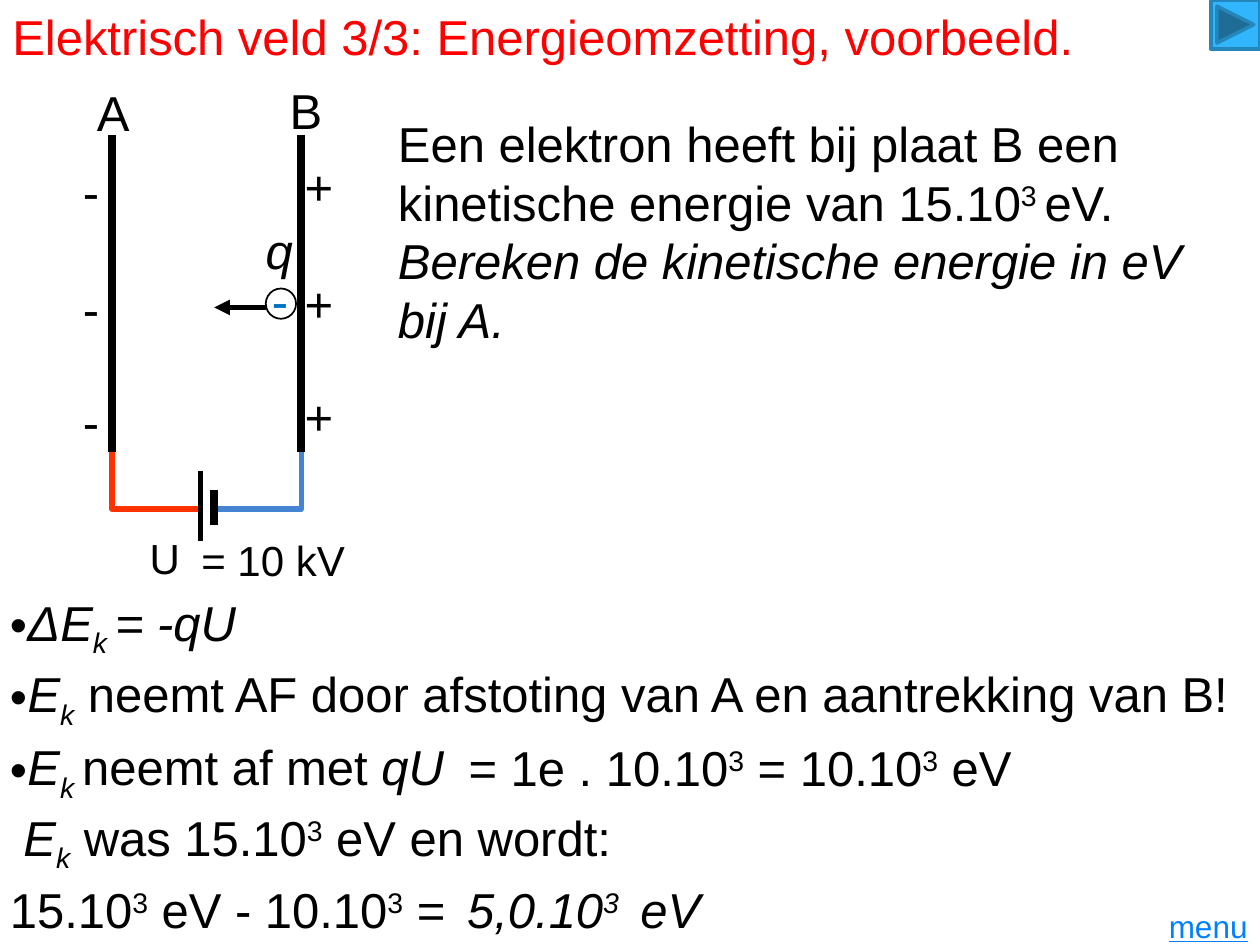
"""Build a physics slide: energy conversion of an electron between charged plates."""
from lxml.etree import SubElement
from pptx import Presentation
from pptx.dml.color import RGBColor
from pptx.enum.shapes import MSO_CONNECTOR, MSO_SHAPE
from pptx.enum.text import MSO_ANCHOR, PP_ALIGN
from pptx.oxml.ns import qn
from pptx.util import Inches, Pt

BLACK = RGBColor(0x00, 0x00, 0x00)
RED = RGBColor(0xFF, 0x00, 0x00)
ORANGE = RGBColor(0xFF, 0x33, 0x00)
WIRE_BLUE = RGBColor(0x45, 0x84, 0xD3)
CHARGE_BLUE = RGBColor(0x00, 0x70, 0xC0)
LINK_BLUE = RGBColor(0x00, 0x80, 0xFF)
BUTTON_FILL = RGBColor(0x31, 0xB6, 0xFD)
BUTTON_LINE = RGBColor(0x24, 0x87, 0xBB)

ITALIC = {"italic": True}
SUPER = {"baseline": 30000}
ITALIC_SUPER = {**ITALIC, **SUPER}
ITALIC_SUB = {"italic": True, "baseline": -25000}
MIDDLE = {"anchor": MSO_ANCHOR.MIDDLE}
BULLET = {"bullet": True}

TITLE = "Elektrisch veld 3/3: Energieomzetting, voorbeeld."
QUESTION = [
    ("Een elektron heeft bij plaat B een kinetische energie van 15.10", {}),
    ("3 ", SUPER), ("eV. ", {}),
    ("Bereken de kinetische energie in eV bij A.", ITALIC),
]
SOLUTION = [
    (4.65, 3.47, BULLET, [("ΔE", ITALIC), ("k ", ITALIC_SUB), ("= -qU", ITALIC)]),
    (5.22, 10.01, BULLET, [
        ("E", ITALIC), ("k", ITALIC_SUB),
        (" neemt AF door afstoting van A en aantrekking van B!", {})]),
    (5.8, 4.16, BULLET, [
        ("E", ITALIC), ("k ", ITALIC_SUB), ("neemt af met ", {}), ("qU", ITALIC)]),
    (6.36, 10, {}, [
        (" ", {}), ("E", ITALIC), ("k", ITALIC_SUB), (" was 15.10", {}),
        ("3", SUPER), (" eV en wordt:", {})]),
    (6.93, 4.28, {}, [
        ("15.10", {}), ("3", SUPER), (" eV - 10.10", {}), ("3", SUPER), (" =", {})]),
]
ENERGY_LOSS = [("= 1e . 10.10", {}), ("3", SUPER), (" = 10.10", {}), ("3", SUPER), (" eV", {})]
RESULT = [("5,0.10", ITALIC), ("3 ", ITALIC_SUPER), (" eV", ITALIC)]

PLATE_A, PLATE_B = 0.89, 2.39
PLATE_TOP, PLATE_BOTTOM, WIRE_BOTTOM = 1.07, 3.59, 4.04
CHARGE_TOPS = (1.19, 2.12, 3.02)
CELL_LONG, CELL_SHORT = 1.59, 1.7
LABELS = [
    ("A", (0.67, 0.53, 0.87, 0.71), MIDDLE),
    ("B", (2.2, 0.52, 0.87, 0.71), MIDDLE),
    ("U", (1.09, 4.07, 1.23, 0.71), {**MIDDLE, "size": 24}),
    ("= 10 kV", (1.5, 4.09, 1.73, 0.71), {**MIDDLE, "size": 24}),
    ("-", (2.06, 2.1, 0.63, 0.57), {"color": CHARGE_BLUE}),
]
LINES = [
    ((PLATE_A, PLATE_TOP), (PLATE_A, PLATE_BOTTOM), 5),
    ((PLATE_B, PLATE_TOP), (PLATE_B, PLATE_BOTTOM), 5),
    ((CELL_LONG, 3.74), (CELL_LONG, 4.29), 3),
    ((CELL_SHORT, 3.89), (CELL_SHORT, 4.17), 4.5),
]
WIRES = [(PLATE_A, CELL_LONG, ORANGE), (PLATE_B, CELL_SHORT, WIRE_BLUE)]


def add_text(slide, box, runs, size=28, color=BLACK, anchor=MSO_ANCHOR.TOP,
             align=PP_ALIGN.LEFT, bullet=False, underline=None):
    frame = slide.shapes.add_textbox(*map(Inches, box)).text_frame
    frame.word_wrap = True
    frame.vertical_anchor = anchor
    paragraph = frame.paragraphs[0]
    paragraph.alignment = align
    if bullet:
        properties = paragraph._p.get_or_add_pPr()
        properties.set("marL", str(Inches(0.14)))
        properties.set("indent", str(-Inches(0.14)))
        SubElement(properties, qn("a:buFont"), typeface="Arial")
        SubElement(properties, qn("a:buChar"), char="•")
    for text, style in runs:
        run = paragraph.add_run()
        run.text = text
        run.font.color.rgb = color
        values = {"name": "Arial", "size": Pt(size), "underline": underline, **style}
        baseline = values.pop("baseline", None)
        for name, value in values.items():
            setattr(run.font, name, value)
        if baseline:
            run._r.get_or_add_rPr().set("baseline", str(baseline))


def add_line(slide, start, end, width):
    line = slide.shapes.add_connector(
        MSO_CONNECTOR.STRAIGHT, *map(Inches, (*start, *end)))
    line.line.color.rgb = BLACK
    line.line.width = Pt(width)
    SubElement(line._element.spPr, qn("a:effectLst"))
    return line


def style_shape(shape, line_color, width, fill=None):
    shape.shadow.inherit = False
    if fill is None:
        shape.fill.background()
    else:
        shape.fill.solid()
        shape.fill.fore_color.rgb = fill
    shape.line.color.rgb = line_color
    shape.line.width = Pt(width)


def add_circuit(slide):
    for plate, cell, color in WIRES:
        builder = slide.shapes.build_freeform(
            Inches(plate), Inches(PLATE_BOTTOM), scale=1.0)
        corners = [(plate, WIRE_BOTTOM), (cell, WIRE_BOTTOM)]
        builder.add_line_segments(
            [(Inches(x), Inches(y)) for x, y in corners], close=False)
        style_shape(builder.convert_to_shape(), color, 3)
    for start, end, width in LINES:
        add_line(slide, start, end, width)
    for top in CHARGE_TOPS:
        add_text(slide, (0.56, top + 0.04, 0.31, 0.57), [("-", {})])
        add_text(slide, (2.32, top, 0.31, 0.57), [("+", {})])
    for text, box, options in LABELS:
        add_text(slide, box, [(text, {})], **options)


def add_electron(slide):
    add_text(slide, (2.01, 1.7, 0.47, 0.57), [("q", ITALIC)])
    electron = slide.shapes.add_shape(
        MSO_SHAPE.OVAL, *map(Inches, (2.11, 2.29, 0.24, 0.24)))
    style_shape(electron, BLACK, 1)
    arrow = add_line(slide, (2.11, 2.44), (1.7, 2.44), 3)
    SubElement(arrow.line._get_or_add_ln(), qn("a:tailEnd"), type="triangle")


def main():
    presentation = Presentation()
    presentation.slide_width = Inches(10)
    presentation.slide_height = Inches(7.5)
    slide = presentation.slides.add_slide(presentation.slide_layouts[6])
    add_text(slide, (0, 0, 10, 0.57), [(TITLE, {})], color=RED)
    add_text(slide, (3.06, 0.85, 6.85, 1.99), QUESTION)
    add_circuit(slide)
    add_electron(slide)
    for top, width, options, runs in SOLUTION:
        add_text(slide, (-0.02, top, width, 0.57), runs, **options)
    add_text(slide, (3.62, 5.73, 5.49, 0.71), ENERGY_LOSS, **MIDDLE)
    add_text(slide, (3.61, 6.93, 2.44, 0.57), RESULT)
    add_text(slide, (9.06, 7.19, 0.94, 0.31), [("menu", {})], size=18,
             color=LINK_BLUE, align=PP_ALIGN.RIGHT, underline=True, **MIDDLE)
    button = slide.shapes.add_shape(
        MSO_SHAPE.ACTION_BUTTON_FORWARD_OR_NEXT, *map(Inches, (9.61, 0, 0.39, 0.39)))
    style_shape(button, BUTTON_LINE, 2, BUTTON_FILL)
    presentation.save("out.pptx")


if __name__ == "__main__":
    main()
